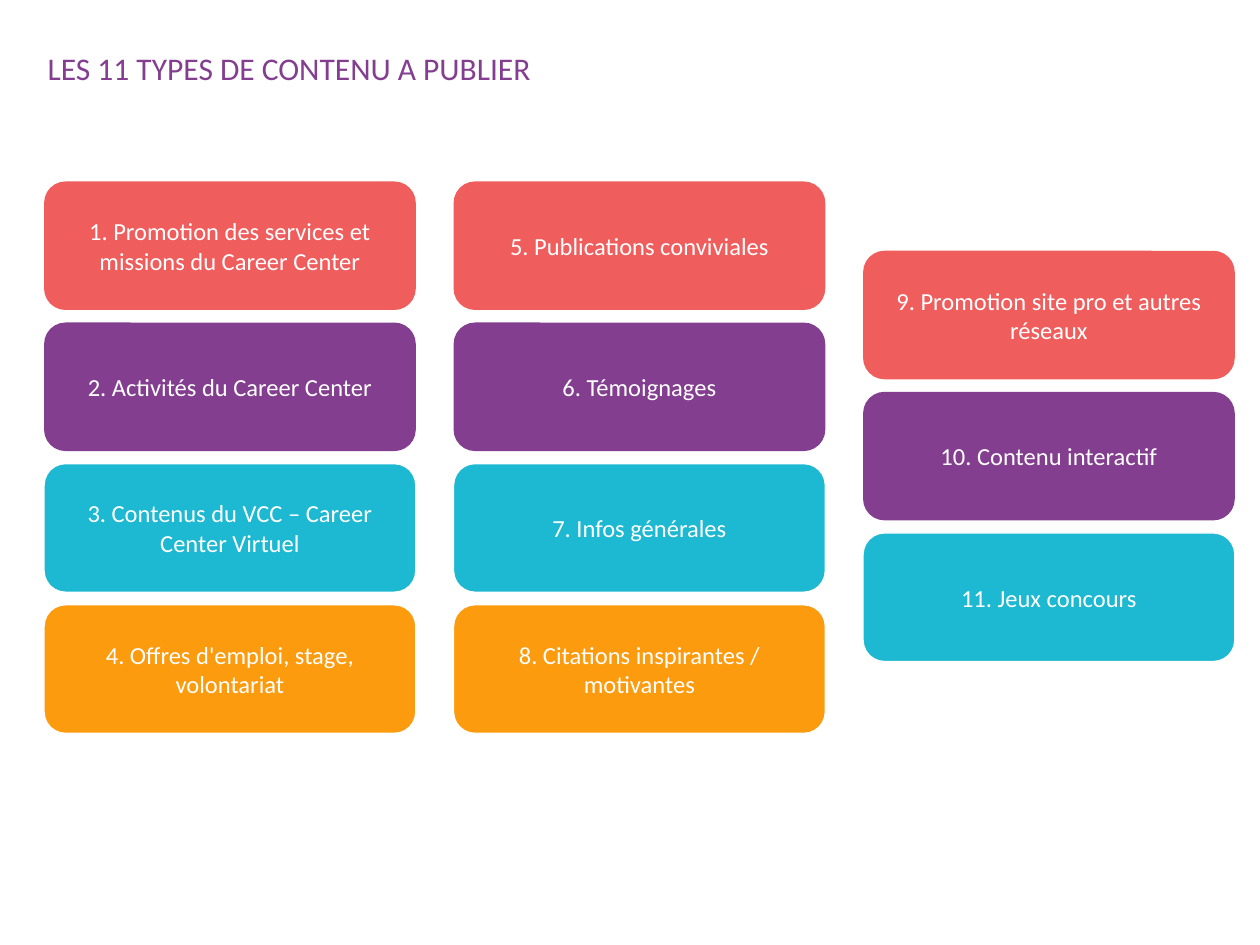
from pptx import Presentation
from pptx.dml.color import RGBColor
from pptx.enum.shapes import MSO_SHAPE
from pptx.enum.text import MSO_ANCHOR, PP_ALIGN
from pptx.util import Inches, Pt

ROUNDED = MSO_SHAPE.ROUNDED_RECTANGLE
MIDDLE = MSO_ANCHOR.MIDDLE
CENTER = PP_ALIGN.CENTER

CORAL = RGBColor(0xF0, 0x5D, 0x5D)
PURPLE = RGBColor(0x83, 0x3E, 0x90)
TURQUOISE = RGBColor(0x1D, 0xB8, 0xD1)
ORANGE = RGBColor(0xFC, 0x9B, 0x0E)
WHITE = RGBColor(0xFF, 0xFF, 0xFF)

TITLE = "LES 11 TYPES DE CONTENU A PUBLIER"
# Top of each column and its content types
COLUMNS = [
    (1.44, ["Promotion des services et missions du Career Center",
            "Activités du Career Center",
            "Contenus du VCC – Career Center Virtuel",
            "Offres d'emploi, stage, volontariat"]),
    (1.44, ["Publications conviviales",
            "Témoignages",
            "Infos générales",
            "Citations inspirantes / motivantes"]),
    (1.99, ["Promotion site pro et autres réseaux",
            "Contenu interactif",
            "Jeux concours"]),
]
# Fill and whether the card is outlined, by row
ROW_STYLES = [(CORAL, False), (PURPLE, False), (TURQUOISE, True), (ORANGE, True)]

LEFT, COLUMN_STEP, ROW_STEP = 0.35, 3.25, 1.12
CARD_WIDTH, CARD_HEIGHT = 2.95, 1.02


def write(shape, text, size, color):
    shape.text_frame.word_wrap = True
    shape.text_frame.text = text
    font = shape.text_frame.paragraphs[0].runs[0].font
    font.name = "Calibri"
    font.size = Pt(size)
    font.color.rgb = color


def add_card(slide, left, top, text, fill, outlined):
    card = slide.shapes.add_shape(ROUNDED, Inches(left), Inches(top),
                                  Inches(CARD_WIDTH), Inches(CARD_HEIGHT))
    card.shadow.inherit = False
    card.fill.solid()
    card.fill.fore_color.rgb = fill
    if outlined:
        card.line.color.rgb = WHITE
        card.line.width = Pt(0.75)
    else:
        card.line.fill.background()
    write(card, text, 14, WHITE)
    card.text_frame.vertical_anchor = MIDDLE
    card.text_frame.paragraphs[0].alignment = CENTER


def main():
    presentation = Presentation()
    presentation.slide_width = Inches(10)
    presentation.slide_height = Inches(7.5)
    slide = presentation.slides.add_slide(presentation.slide_layouts[6])

    title = slide.shapes.add_textbox(Inches(0.28), Inches(0.34), Inches(8.03), Inches(0.71))
    write(title, TITLE, 18, PURPLE)

    number = 1
    for column, (column_top, labels) in enumerate(COLUMNS):
        for row, (label, (fill, outlined)) in enumerate(zip(labels, ROW_STYLES)):
            add_card(slide, LEFT + column * COLUMN_STEP, column_top + row * ROW_STEP,
                     f"{number}. {label}", fill, outlined)
            number += 1

    presentation.save("out.pptx")


if __name__ == "__main__":
    main()
